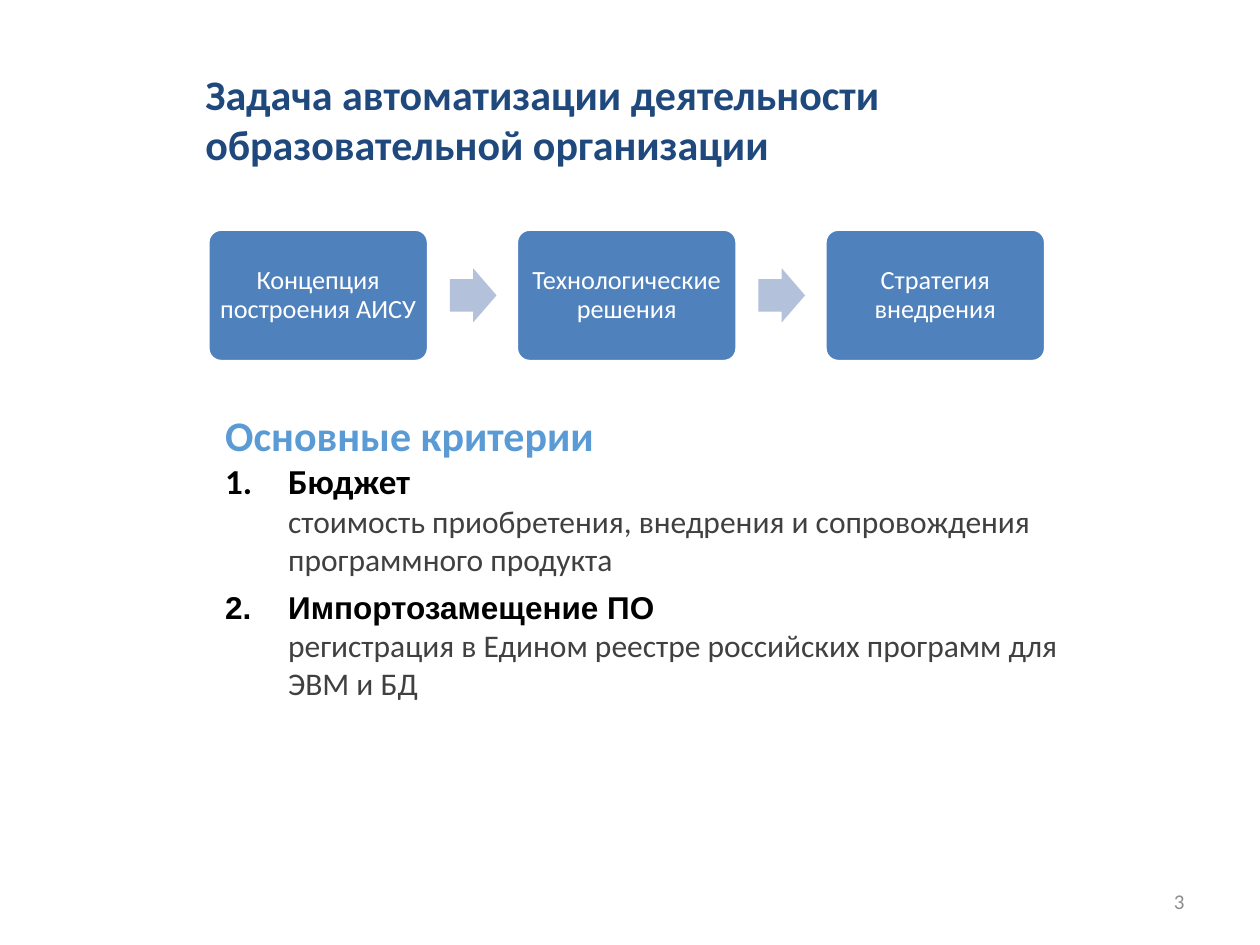
from lxml import etree
from pptx import Presentation
from pptx.dml.color import RGBColor
from pptx.enum.shapes import MSO_SHAPE
from pptx.enum.text import MSO_ANCHOR, PP_ALIGN
from pptx.oxml.ns import qn
from pptx.util import Cm, Pt

ROUNDED, ARROW = MSO_SHAPE.ROUNDED_RECTANGLE, MSO_SHAPE.RIGHT_ARROW
TOP, MIDDLE, BOTTOM = MSO_ANCHOR.TOP, MSO_ANCHOR.MIDDLE, MSO_ANCHOR.BOTTOM
LEFT, CENTER, RIGHT = PP_ALIGN.LEFT, PP_ALIGN.CENTER, PP_ALIGN.RIGHT

TITLE = "Задача автоматизации деятельности образовательной организации"
PAGE_NUMBER = "3"
STAGES = ["Концепция построения АИСУ", "Технологические решения", "Стратегия внедрения"]
CRITERIA_HEADING = "Основные критерии"
CRITERIA = [
    ("Бюджет", "first_criterion",
     "стоимость приобретения, внедрения и сопровождения программного продукта"),
    ("Импортозамещение ПО", "second_criterion",
     "регистрация в Едином реестре российских программ для ЭВМ и БД"),
]

THEME = {
    "stage_fill": "4F81BD",
    "stage_line": "FFFFFF",
    "arrow_fill": "B3C1DB",
    "title": ("Calibri", 24, "1F497D", True),
    "number": ("Calibri", 12, "8C8C8C", False),
    "stage": ("Calibri", 15, "FFFFFF", False),
    "heading": ("Calibri", 24, "5B9BD5", True),
    "first_criterion": ("Calibri", 20, "000000", True),
    "second_criterion": ("Arial", 18, "000000", True),
    "detail": ("Calibri", 18, "404040", False),
}

STAGE_LEFT, STAGE_TOP, STAGE_WIDTH, STAGE_HEIGHT = 4.19, 4.62, 4.45, 2.67
STAGE_STEP = 6.22
ARROW_OFFSET, ARROW_WIDTH, ARROW_HEIGHT = 4.88, 0.94, 1.09
INDENT = 1.27


def write(para, text, style, align=LEFT):
    para.text = text
    para.alignment = align
    name, size, color, bold = THEME[style]
    para.font.name, para.font.size, para.font.bold = name, Pt(size), bold
    para.font.color.rgb = RGBColor.from_string(color)


def add_text_box(page, place, anchor):
    frame = page.shapes.add_textbox(*map(Cm, place)).text_frame
    frame.word_wrap = True
    frame.vertical_anchor = anchor
    return frame


def add_filled_shape(page, kind, place, fill, adjustments):
    shape = page.shapes.add_shape(kind, *map(Cm, place))
    shape.shadow.inherit = False
    shape.fill.solid()
    shape.fill.fore_color.rgb = RGBColor.from_string(fill)
    for index, value in enumerate(adjustments):
        shape.adjustments[index] = value
    return shape


def indent(para, number=None):
    properties = para._p.get_or_add_pPr()
    properties.set("marL", str(Cm(INDENT)))
    if number:
        properties.set("indent", str(-Cm(INDENT)))
        etree.SubElement(properties, qn("a:buAutoNum"), type="arabicPeriod", startAt=str(number))


def add_stage(page, index, text):
    left = STAGE_LEFT + index * STAGE_STEP
    box = add_filled_shape(page, ROUNDED, (left, STAGE_TOP, STAGE_WIDTH, STAGE_HEIGHT),
                           THEME["stage_fill"], [0.1])
    box.line.color.rgb = RGBColor.from_string(THEME["stage_line"])
    box.line.width = Pt(2)
    frame = box.text_frame
    frame.word_wrap = True
    frame.vertical_anchor = MIDDLE
    frame.margin_left = frame.margin_right = frame.margin_top = frame.margin_bottom = Cm(0.15)
    write(frame.paragraphs[0], text, "stage", CENTER)
    frame.paragraphs[0].line_spacing = 0.9
    if index < len(STAGES) - 1:
        top = STAGE_TOP + (STAGE_HEIGHT - ARROW_HEIGHT) / 2
        arrow = add_filled_shape(page, ARROW, (left + ARROW_OFFSET, top, ARROW_WIDTH, ARROW_HEIGHT),
                                 THEME["arrow_fill"], [0.6, 0.5])
        arrow.line.fill.background()


def add_criteria(page):
    frame = add_text_box(page, (4.29, 8.13, 18.39, 6.2), TOP)
    write(frame.paragraphs[0], CRITERIA_HEADING, "heading")
    for number, (name, style, detail) in enumerate(CRITERIA, 1):
        para = frame.add_paragraph()
        indent(para, number)
        write(para, name, style)
        para = frame.add_paragraph()
        para.level = 1
        indent(para)
        write(para, detail, "detail")
        if number < len(CRITERIA):
            para.space_after = Pt(6)


def main():
    deck = Presentation()
    deck.slide_width, deck.slide_height = Cm(25.4), Cm(19.05)
    page = deck.slides.add_slide(deck.slide_layouts[6])
    title = add_text_box(page, (3.89, 1.23, 19.2, 2.3), BOTTOM)
    write(title.paragraphs[0], TITLE, "title")
    number = add_text_box(page, (18.2, 17.66, 5.93, 1.01), MIDDLE)
    write(number.paragraphs[0], PAGE_NUMBER, "number", RIGHT)
    for index, text in enumerate(STAGES):
        add_stage(page, index, text)
    add_criteria(page)
    deck.save("out.pptx")


if __name__ == "__main__":
    main()
